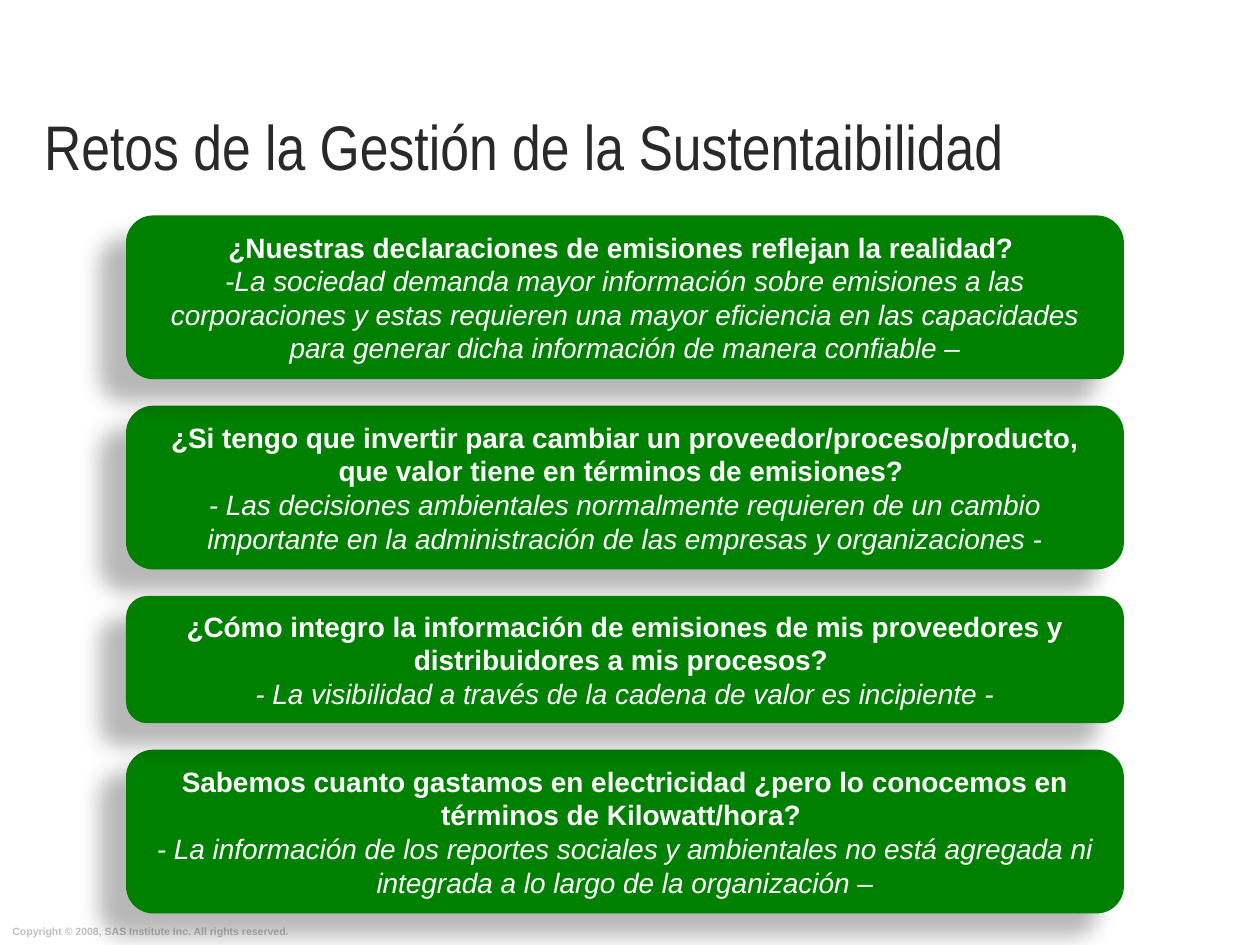
import pptx
import pptx.dml.color
import pptx.enum.shapes
import pptx.enum.text
import pptx.oxml
import pptx.oxml.ns
import pptx.util

Inches, Pt = pptx.util.Inches, pptx.util.Pt
ANCHOR = pptx.enum.text.MSO_ANCHOR
ALIGN = pptx.enum.text.PP_ALIGN

COLORS = {
    "title": "292929",
    "panel": "008000",
    "panel_text": "FFFFFF",
    "shadow": "000000",
    "copyright": "C0C0C0",
}

PAGE_WIDTH, PAGE_HEIGHT = 10, 7.5
PANEL_LEFT, PANEL_WIDTH = 1, 7.92
FIRST_TOP, GAP = 1.71, 0.21

# Height, question and comment of each panel, from top to bottom
CHALLENGES = [
    (1.3, "¿Nuestras declaraciones de emisiones reflejan la realidad? ",
     "-La sociedad demanda mayor información sobre emisiones a las corporaciones "
     "y estas requieren una mayor eficiencia en las capacidades para generar "
     "dicha información de manera confiable –"),
    (1.3, "¿Si tengo que invertir para cambiar un proveedor/proceso/producto, "
     "que valor tiene en términos de emisiones? ",
     "- Las decisiones ambientales normalmente requieren de un cambio importante "
     "en la administración de las empresas y organizaciones -"),
    (1.01, "¿Cómo integro la información de emisiones de mis proveedores y "
     "distribuidores a mis procesos? ",
     "- La visibilidad a través de la cadena de valor es incipiente -"),
    (1.3, "Sabemos cuanto gastamos en electricidad ¿pero lo conocemos en "
     "términos de Kilowatt/hora? ",
     "- La información de los reportes sociales y ambientales no está agregada "
     "ni integrada a lo largo de la organización –"),
]
# Panels from back to front: each shadow falls on the panels behind it
STACKING = [3, 1, 0, 2]


def rgb(name):
    return pptx.dml.color.RGBColor.from_string(COLORS[name])


def style(para, size, color, face="Arial", bold=False, italic=False):
    font = para.font
    font.name, font.size = face, Pt(size)
    font.bold, font.italic = bold, italic
    font.color.rgb = rgb(color)


def add_shadow(shape):
    """Give the shape a soft shadow towards the lower left."""
    shape.shadow.inherit = False
    effects = shape._element.spPr.find(pptx.oxml.ns.qn("a:effectLst"))
    effects.append(pptx.oxml.parse_xml(
        f'<a:outerShdw {pptx.oxml.ns.nsdecls("a")} blurRad="{Pt(11.8)}" '
        f'dist="{Pt(19.7)}" dir="{141 * 60000}" algn="ctr" rotWithShape="0">'
        f'<a:srgbClr val="{COLORS["shadow"]}"><a:alpha val="28000"/></a:srgbClr>'
        '</a:outerShdw>'))


def add_title(page, text):
    title = page.shapes.title
    title.left, title.top = Inches(0.25), Inches(0.58)
    title.width, title.height = Inches(9.5), Inches(1.25)
    frame = title.text_frame
    frame.text = text
    frame.vertical_anchor = ANCHOR.MIDDLE
    frame.auto_size = pptx.enum.text.MSO_AUTO_SIZE.NONE
    para = frame.paragraphs[0]
    para.alignment = ALIGN.LEFT
    para.line_spacing = 0.83
    style(para, 36, "title", face="Arial Narrow")


def add_copyright(page, text):
    height = 0.33
    box = page.shapes.add_textbox(0, Inches(PAGE_HEIGHT - height - 0.01),
                                  Inches(3.83), Inches(height))
    frame = box.text_frame
    frame.word_wrap = True
    frame.vertical_anchor = ANCHOR.BOTTOM
    frame.text = text
    style(frame.paragraphs[0], 6, "copyright", bold=True)


def add_panel(page, top, height, question, comment):
    panel = page.shapes.add_shape(
        pptx.enum.shapes.MSO_SHAPE.ROUNDED_RECTANGLE,
        Inches(PANEL_LEFT), Inches(top), Inches(PANEL_WIDTH), Inches(height))
    panel.fill.solid()
    panel.fill.fore_color.rgb = rgb("panel")
    panel.line.fill.background()
    add_shadow(panel)
    frame = panel.text_frame
    frame.word_wrap = True
    frame.vertical_anchor = ANCHOR.MIDDLE
    frame.text = f"{question}\n{comment}"
    for para, is_question in zip(frame.paragraphs, (True, False)):
        para.alignment = ALIGN.CENTER
        style(para, 16, "panel_text", bold=is_question, italic=not is_question)


def add_challenges(page):
    tops = [FIRST_TOP]
    for height, _, _ in CHALLENGES[:-1]:
        tops.append(tops[-1] + height + GAP)
    for index in STACKING:
        add_panel(page, tops[index], *CHALLENGES[index])


def main():
    deck = pptx.Presentation()
    deck.slide_width, deck.slide_height = Inches(PAGE_WIDTH), Inches(PAGE_HEIGHT)
    page = deck.slides.add_slide(deck.slide_layouts.get_by_name("Title Only"))
    add_copyright(page, "Copyright © 2008, SAS Institute Inc. All rights reserved.")
    add_title(page, "Retos de la Gestión de la Sustentaibilidad")
    add_challenges(page)
    deck.save("out.pptx")


if __name__ == "__main__":
    main()
